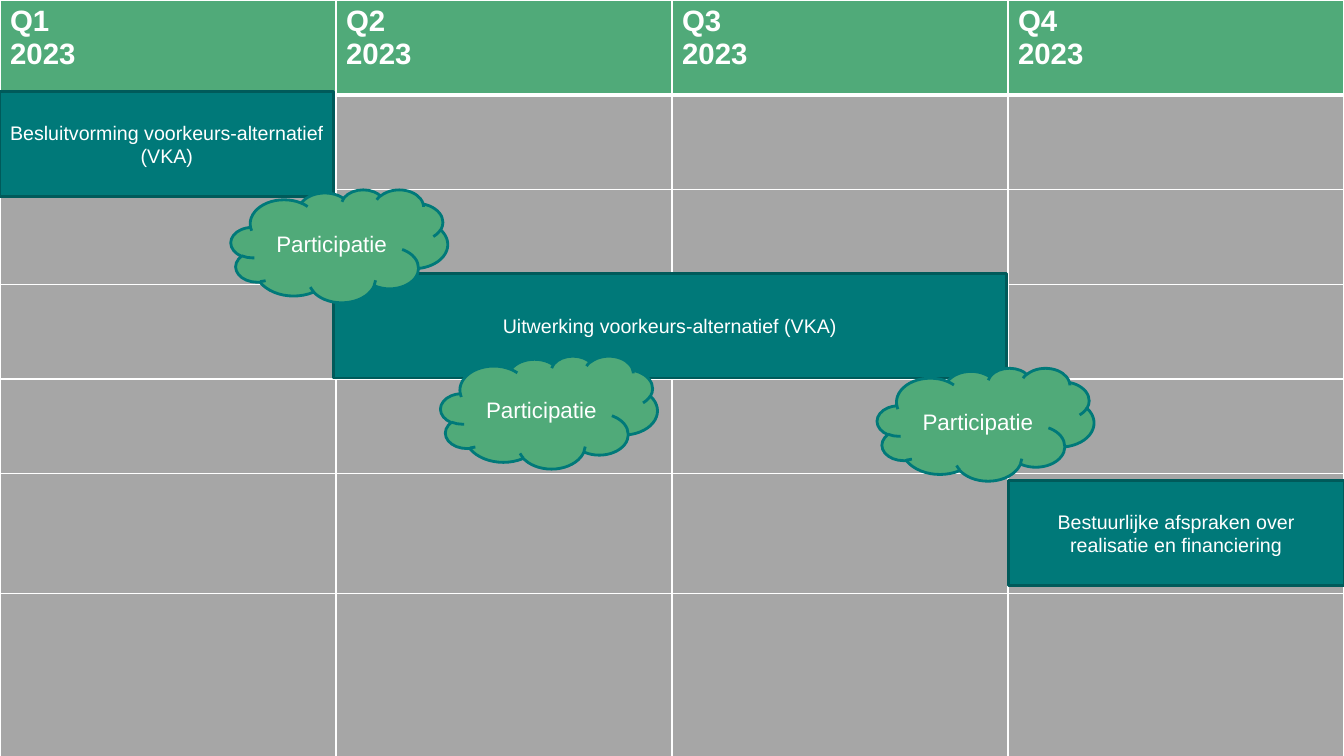
from dataclasses import dataclass

import pptx
import pptx.dml.color
import pptx.enum.shapes
import pptx.enum.text
import pptx.oxml
import pptx.oxml.ns
import pptx.util
from lxml import etree

Inches = pptx.util.Inches
Pt = pptx.util.Pt
SHAPE = pptx.enum.shapes.MSO_SHAPE


@dataclass(frozen=True)
class Theme:
    """Colours, font and type sizes of the slide."""
    white: str = "FFFFFF"
    green: str = "50AA79"
    teal: str = "007979"
    dark_teal: str = "005A5A"
    grey: str = "A6A6A6"
    font: str = "Arial"
    header_size: int = 21
    phase_size: int = 14
    cloud_size: int = 16


THEME = Theme()
QUARTERS = ["Q1", "Q2", "Q3", "Q4"]
YEAR = "2023"
COLUMN_WIDTH = 13.33 / len(QUARTERS)
ROW_HEIGHTS = [0.94] * 5 + [1.19, 1.83]


def rgb(value):
    """Return a colour object for a hex value."""
    return pptx.dml.color.RGBColor.from_string(value)


def style_paragraph(p, size, bold=False):
    """Set the white slide font on a paragraph."""
    p.font.name = THEME.font
    p.font.size = Pt(size)
    p.font.bold = bold
    p.font.color.rgb = rgb(THEME.white)


def set_border(cell, side, width):
    """Draw one white border of a table cell."""
    tc_pr = cell._tc.get_or_add_tcPr()
    ln = etree.SubElement(tc_pr, pptx.oxml.ns.qn(f"a:ln{side}"), w=str(Pt(width)))
    fill = etree.SubElement(ln, pptx.oxml.ns.qn("a:solidFill"))
    etree.SubElement(fill, pptx.oxml.ns.qn("a:srgbClr"), val=THEME.white)


def style_cell(cell, row):
    """Set the borders and fill of a cell in the given row."""
    widths = {"L": 1, "R": 1, "T": 3 if row == 1 else 1, "B": 3 if row == 0 else 1}
    for side, width in widths.items():
        set_border(cell, side, width)
    cell.fill.solid()
    cell.fill.fore_color.rgb = rgb(THEME.green if row == 0 else THEME.grey)


def add_calendar(slide):
    """Add the quarter grid with its header row."""
    frame = slide.shapes.add_table(
        len(ROW_HEIGHTS), len(QUARTERS), 0, 0, Inches(13.33), Inches(sum(ROW_HEIGHTS)))
    table = frame.table
    table.horz_banding = False
    for column in table.columns:
        column.width = Inches(COLUMN_WIDTH)
    for i, height in enumerate(ROW_HEIGHTS):
        table.rows[i].height = Inches(height)
        for j in range(len(QUARTERS)):
            style_cell(table.cell(i, j), i)
    for j, quarter in enumerate(QUARTERS):
        tf = table.cell(0, j).text_frame
        tf.text = f"{quarter}\n{YEAR}"
        for p in tf.paragraphs:
            style_paragraph(p, THEME.header_size, bold=True)


def add_block(slide, kind, box, text, fill, line, size):
    """Add a filled shape with centred text."""
    sp = slide.shapes.add_shape(kind, *(Inches(v) for v in box))
    sp.shadow.inherit = False
    sp.fill.solid()
    sp.fill.fore_color.rgb = rgb(fill)
    sp.line.color.rgb = rgb(line)
    sp.line.width = Pt(2)
    tf = sp.text_frame
    tf.word_wrap = True
    tf.vertical_anchor = pptx.enum.text.MSO_ANCHOR.MIDDLE
    p = tf.paragraphs[0]
    p.text = text
    p.alignment = pptx.enum.text.PP_ALIGN.CENTER
    style_paragraph(p, size)


def add_phase(slide, left, top, width, text):
    """Add a planning phase bar."""
    add_block(slide, SHAPE.RECTANGLE, (left, top, width, 1.04), text,
              THEME.teal, THEME.dark_teal, THEME.phase_size)


def add_participation(slide, left, top):
    """Add a participation cloud."""
    add_block(slide, SHAPE.CLOUD, (left, top, 2.15, 1.12), "Participatie",
              THEME.green, THEME.teal, THEME.cloud_size)


def main():
    """Build the planning slide and save it."""
    prs = pptx.Presentation()
    prs.slide_width = Inches(13.33)
    prs.slide_height = Inches(7.5)
    slide = prs.slides.add_slide(prs.slide_layouts[6])
    add_calendar(slide)
    add_phase(slide, 0, 0.91, 3.31, "Besluitvorming voorkeurs-alternatief (VKA)")
    add_phase(slide, 3.31, 2.71, 6.67, "Uitwerking voorkeurs-alternatief (VKA)")
    for left, top in [(2.29, 1.88), (4.37, 3.53), (8.7, 3.65)]:
        add_participation(slide, left, top)
    add_phase(slide, 10, 4.77, 3.33, "Bestuurlijke afspraken over realisatie en financiering")
    prs.save("out.pptx")


if __name__ == "__main__":
    main()
